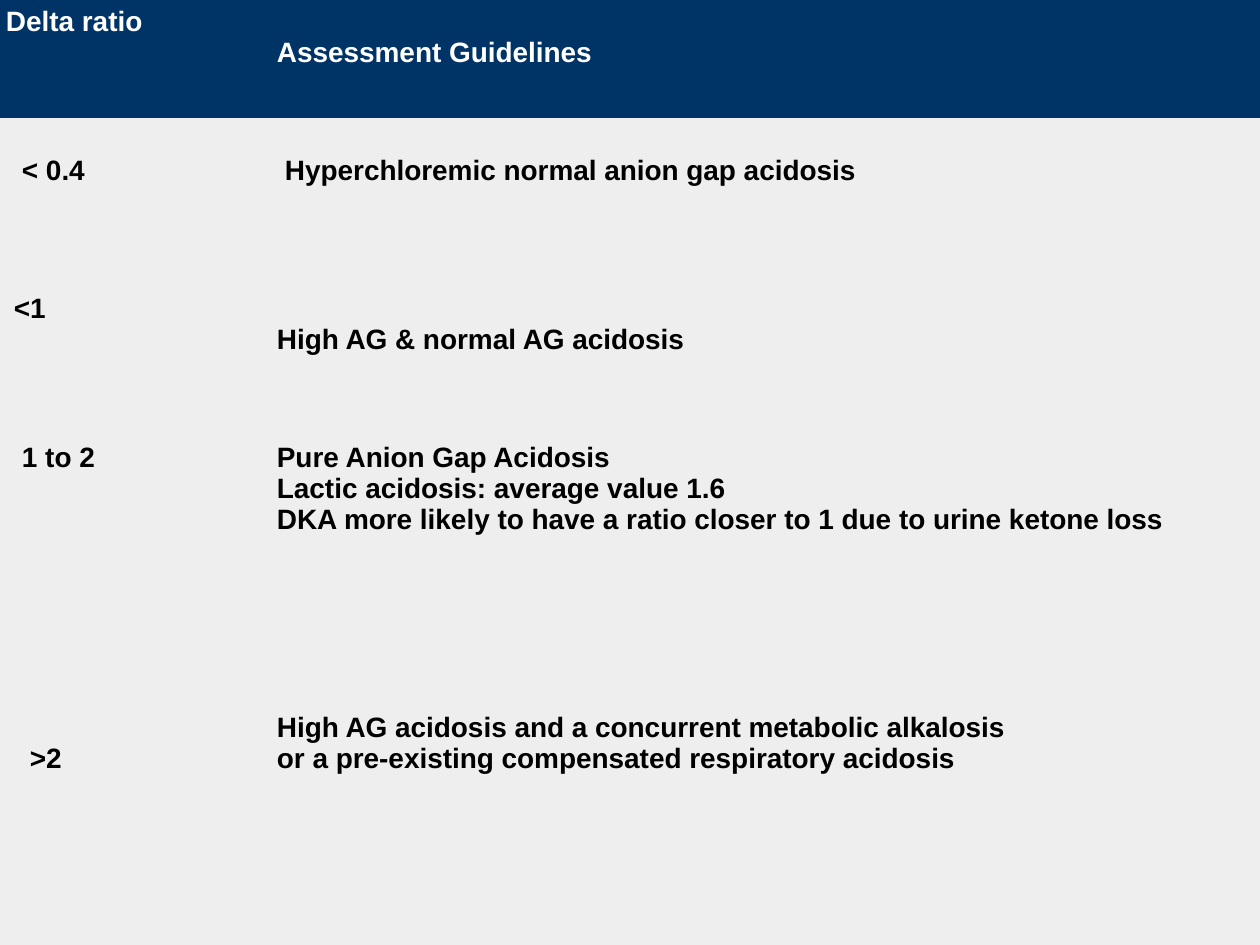
from lxml import etree
from pptx import Presentation
from pptx import util as u
from pptx.dml.color import RGBColor
from pptx.oxml import ns

SCALE = 914400 // 126
PAD, LINE, INDENT = 6, 31, 8
COLS = [271, 989]
ROWS = [118, 169, 118, 270, 270]
NAVY, GREY, WHITE, BLACK = "003366", "EEEEEE", "FFFFFF", "000000"

# Each cell: text, lines to drop, steps to indent
CELLS = [
    [("Delta ratio", 0, 0), ("Assessment Guidelines", 1, 0)],
    [("< 0.4", 1, 2), ("Hyperchloremic normal anion gap acidosis", 1, 1)],
    [("<1", 0, 1), ("High AG & normal AG acidosis", 1, 0)],
    [("1 to 2", 1, 2),
     ("Pure Anion Gap Acidosis\vLactic acidosis: average value 1.6\v"
      "DKA more likely to have a ratio closer to 1 due to urine ketone loss", 1, 0)],
    [(">2", 2, 3),
     ("High AG acidosis and a concurrent metabolic alkalosis\n"
      "or a pre-existing compensated respiratory acidosis", 1, 0)],
]


def px(n):
    return u.Emu(n * SCALE)


def color(code):
    return RGBColor.from_string(code)


class Deck:
    """Holds the text style and the current slide."""

    def __init__(self, face, size):
        self.face, self.size = face, u.Pt(size)
        self.show = Presentation()
        self.show.slide_width, self.show.slide_height = px(sum(COLS)), px(sum(ROWS))
        self.slide = self.show.slides.add_slide(self.show.slide_layouts[6])

    def table(self, cols, rows, cells):
        frame = self.slide.shapes.add_table(
            len(rows), len(cols), 0, 0, px(sum(cols)), px(sum(rows)))
        grid = frame.table
        grid.horz_banding = False
        for col, wide in zip(grid.columns, cols):
            col.width = px(wide)
        for row, high, line in zip(grid.rows, rows, cells):
            row.height = px(high)
            head = line is cells[0]
            for cell, entry in zip(row.cells, line):
                self.cell(cell, *entry, NAVY if head else GREY, WHITE if head else BLACK)

    def cell(self, cell, words, drop, step, fill, ink):
        cell.margin_left = px(PAD + INDENT * step)
        cell.margin_top = px(PAD + LINE * drop)
        cell.margin_right = cell.margin_bottom = px(PAD)
        props = cell._tc.get_or_add_tcPr()
        for side in ("a:lnL", "a:lnR", "a:lnT", "a:lnB"):
            edge = etree.SubElement(props, ns.qn(side), w="0")
            etree.SubElement(edge, ns.qn("a:noFill"))
        cell.fill.solid()
        cell.fill.fore_color.rgb = color(fill)
        cell.text_frame.text = words
        for para in cell.text_frame.paragraphs:
            font = para.font
            font.name, font.size, font.bold = self.face, self.size, True
            font.color.rgb = color(ink)


def main():
    deck = Deck("Arial", 16)
    deck.table(COLS, ROWS, CELLS)
    deck.show.save("out.pptx")


if __name__ == "__main__":
    main()
